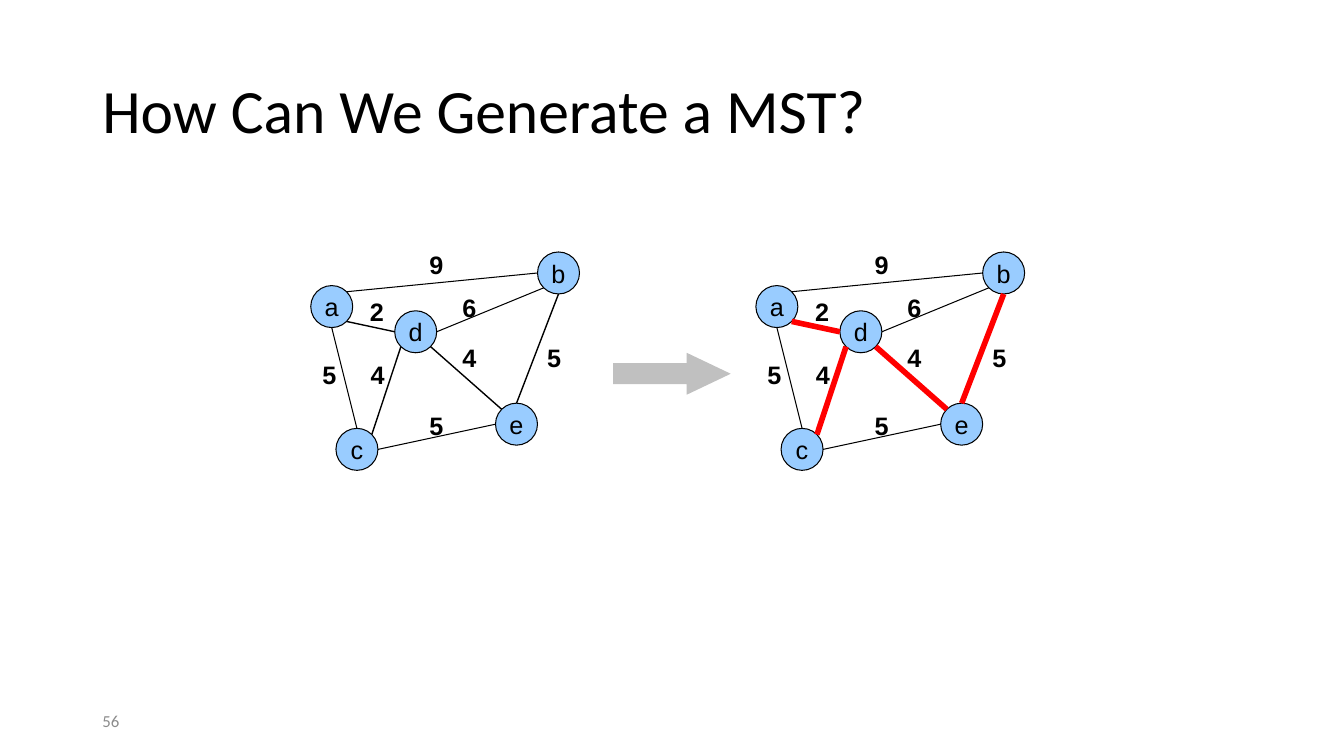
import math

import pptx
import pptx.dml.color
import pptx.enum.shapes
import pptx.enum.text
import pptx.oxml
import pptx.util
from pptx.util import Cm

BLACK = pptx.dml.color.RGBColor(0x00, 0x00, 0x00)
NODE_BLUE = pptx.dml.color.RGBColor(0x99, 0xCC, 0xFF)
TREE_RED = pptx.dml.color.RGBColor(0xFF, 0x00, 0x00)
ARROW_GRAY = pptx.dml.color.RGBColor(0xC0, 0xC0, 0xC0)
NUMBER_GRAY = pptx.dml.color.RGBColor(0x8C, 0x8C, 0x8C)

STEP = 2.54 / 12
DIAMETER = 5 * STEP
GRAPH_TOP = 30 * STEP
GRAPH_LEFT = 37 * STEP
TREE_LEFT = 90 * STEP

NODES = {"a": (0, 4), "c": (3, 21), "e": (22, 18), "d": (10, 7), "b": (27, 0)}
COMPASS = {side: i * math.pi / 4 for i, side in enumerate(["E", "SE", "S", "SW", "W", "NW", "N", "NE"])}
EDGES = [
    ("a", "NE", "b", "W", "9", 2.74, -0.2, False),
    ("d", "E", "b", "SW", "6", 3.57, 0.89, False),
    ("a", "S", "c", "N", "5", 0.04, 2.59, False),
    ("a", "SE", "d", "W", "2", 1.24, 0.99, True),
    ("c", "NE", "d", "SW", "4", 1.26, 2.59, True),
    ("d", "SE", "e", "NW", "4", 3.57, 2.16, True),
    ("b", "S", "e", "N", "5", 5.71, 2.16, True),
    ("e", "W", "c", "E", "5", 2.74, 3.86, False),
]

MIDDLE = pptx.enum.text.MSO_ANCHOR.MIDDLE
CENTER = pptx.enum.text.PP_ALIGN.CENTER
TITLE_FONT = {"name": "Calibri", "size": pptx.util.Pt(44)}
NUMBER_FONT = {"name": "Calibri", "size": pptx.util.Pt(12)}
NODE_FONT = {"name": "Arial", "size": pptx.util.Pt(18)}
WEIGHT_FONT = {**NODE_FONT, "bold": True}
HEADING_FRAME = {"word_wrap": True, "vertical_anchor": MIDDLE}
NODE_FRAME = {"word_wrap": False, "vertical_anchor": MIDDLE}
WEIGHT_FRAME = {"word_wrap": False, "auto_size": pptx.enum.text.MSO_AUTO_SIZE.SHAPE_TO_FIT_TEXT}


def apply_format(target, values):
    """Set each attribute named in values on target."""
    for name, value in values.items():
        setattr(target, name, value)


def write_text(shape, text, font_format, frame_format, paragraph_format, color=BLACK):
    """Write one formatted paragraph into a shape."""
    frame = shape.text_frame
    apply_format(frame, frame_format)
    paragraph = frame.paragraphs[0]
    apply_format(paragraph, paragraph_format)
    run = paragraph.add_run()
    run.text = text
    apply_format(run.font, font_format)
    run.font.color.rgb = color


def add_label(shapes, box, *text_format):
    """Add a text box at a box given in centimetres."""
    write_text(shapes.add_textbox(*map(Cm, box)), *text_format)


def add_filled(shapes, kind, box, fill):
    """Add a preset shape with a plain fill."""
    shape = shapes.add_shape(kind, *map(Cm, box))
    shape.shadow.inherit = False
    shape.fill.solid()
    shape.fill.fore_color.rgb = fill
    return shape


def add_node(shapes, letter, left, top):
    """Add a lettered graph node."""
    node = add_filled(shapes, pptx.enum.shapes.MSO_SHAPE.OVAL, (left, top, DIAMETER, DIAMETER), NODE_BLUE)
    node.line.color.rgb = BLACK
    node.line.width = pptx.util.Pt(0.75)
    write_text(node, letter, NODE_FONT, NODE_FRAME, {"alignment": CENTER})


def rim_point(corner, side):
    """Return the point on a node's rim at a compass side."""
    radius, angle = DIAMETER / 2, COMPASS[side]
    left, top = corner
    return Cm(left + radius + radius * math.cos(angle)), Cm(top + radius + radius * math.sin(angle))


def add_edge(shapes, start, end, color, width):
    """Add a straight edge between two points."""
    edge = shapes.add_connector(pptx.enum.shapes.MSO_CONNECTOR.STRAIGHT, *start, *end)
    edge.line.color.rgb = color
    edge.line.width = pptx.util.Pt(width)
    properties = edge.element.find(pptx.oxml.ns.qn("p:spPr"))
    properties.append(pptx.oxml.parse_xml(
        '<a:effectLst xmlns:a="http://schemas.openxmlformats.org/drawingml/2006/main"/>'))


def add_graph(slide, left, tree_color, tree_width):
    """Add the weighted graph, with its spanning tree in the given style."""
    shapes = slide.shapes.add_group_shape().shapes
    corners = {letter: (left + x * STEP, GRAPH_TOP + y * STEP) for letter, (x, y) in NODES.items()}
    for letter, corner in corners.items():
        add_node(shapes, letter, *corner)
    for start, start_side, end, end_side, _, _, _, in_tree in EDGES:
        color, width = (tree_color, tree_width) if in_tree else (BLACK, 0.75)
        add_edge(shapes, rim_point(corners[start], start_side), rim_point(corners[end], end_side), color, width)
    for _, _, _, _, weight, x, y, _ in EDGES:
        add_label(shapes, (left + x, GRAPH_TOP + y, 0.86, 1.02), weight, WEIGHT_FONT, WEIGHT_FRAME, {})


def add_arrow(slide):
    """Add the arrow from the graph to its spanning tree."""
    box = [units * STEP for units in (73, 42, 14, 5)]
    arrow = add_filled(slide.shapes, pptx.enum.shapes.MSO_SHAPE.RIGHT_ARROW, box, ARROW_GRAY)
    arrow.line.fill.background()
    arrow.adjustments[1] = 1.05


def main():
    """Build the slide and save it."""
    presentation = pptx.Presentation()
    apply_format(presentation, {"slide_width": Cm(33.87), "slide_height": Cm(19.05)})
    slide = presentation.slides.add_slide(presentation.slide_layouts[6])
    add_label(slide.shapes, (2.33, 17.65, 7.62, 1.02), "56", NUMBER_FONT, HEADING_FRAME, {}, NUMBER_GRAY)
    add_label(slide.shapes, (2.33, 1.02, 29.21, 3.68), "How Can We Generate a MST?",
              TITLE_FONT, HEADING_FRAME, {"line_spacing": 0.9})
    add_graph(slide, GRAPH_LEFT, BLACK, 1)
    add_graph(slide, TREE_LEFT, TREE_RED, 4)
    add_arrow(slide)
    presentation.save("out.pptx")


if __name__ == "__main__":
    main()
